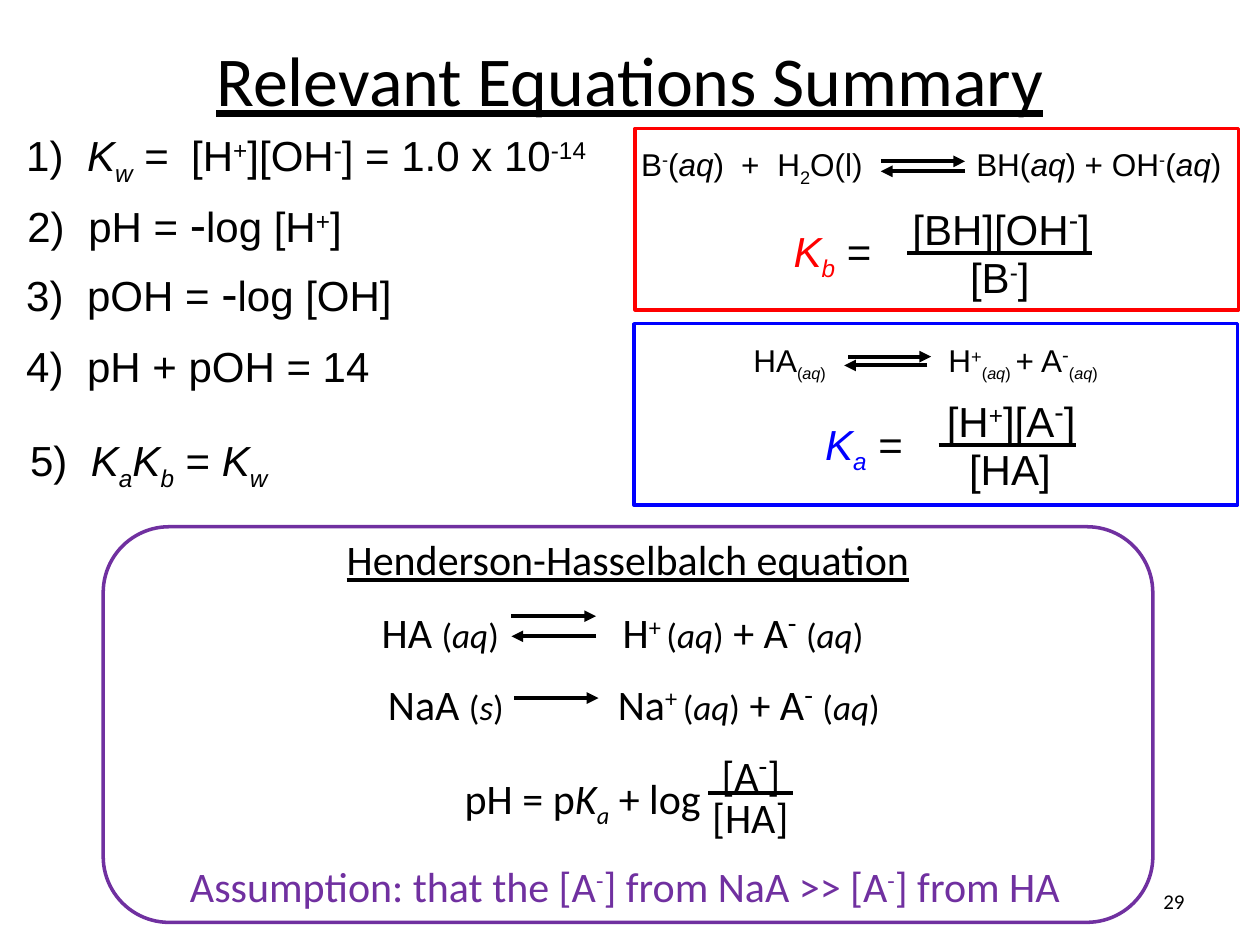
from lxml import etree
from pptx import Presentation
from pptx.dml.color import RGBColor
from pptx.enum import shapes, text
from pptx.oxml.ns import qn
from pptx.util import Pt

BLACK = RGBColor(0, 0, 0)
WHITE = RGBColor(255, 255, 255)
RED = RGBColor(255, 0, 0)
BLUE = RGBColor(0, 0, 255)
PURPLE = RGBColor(0x70, 0x30, 0xA0)
SANS, BODY = "Arial", "Calibri"
LEFT, MID, RIGHT = text.PP_ALIGN.LEFT, text.PP_ALIGN.CENTER, text.PP_ALIGN.RIGHT

# Runs are parted by "|" and may open with marks:
# ^ superscript, _ subscript, / italic, ~ smaller, ! larger, * accent colour
SIZES = {24: {"~": 20, "!": 28}, 18: {"~": 16, "!": 20}}

# Frames: kind, left, top, width, height, colour, fill
FRAMES = [
    ("RECTANGLE", 362.9, 73.4, 344.9, 103.7, RED, None),
    ("RECTANGLE", 362.2, 185, 344.9, 103.7, BLUE, None),
    ("ROUNDED_RECTANGLE", 59, 301, 599.8, 226.1, PURPLE, WHITE),
]

# Numbered equations: left, top, text, tab stops
RULES = [
    (7.9, 70.6, "1)\t|/K|_/w| =\t[H|^+|][OH|^-|] = 1.0 x 10|^-14", (34.8, 94.3)),
    (8.6, 107.3, "2)\tpH = |!-|log [H|^+|]", (34.8,)),
    (7.9, 146.2, "3)\tpOH = |!-|log [OH]", (34.8,)),
    (7.9, 190.8, "4)\tpH + pOH = 14", (34.8,)),
    (10.1, 244.8, "5)\t|/K|_/a|/K|_/b| = |/K|_/w", (34.8,)),
]

# Reactions: left, top, size, font, text, tab stops
REACTS = [
    (359.3, 79.2, 18, SANS,
     "B|^-|(|/aq|)\t+\tH|_2|O(l)\tBH(|/aq|) + OH|^-|(|/aq|)", (57.2, 77.8, 191.5)),
    (423.4, 189.4, 18, SANS,
     "HA|_~(|_~/aq|_~)|\tH|^+|_~(|_~/aq|_~)|_ |+ A|^!-|_~(|_~/aq|_~)", (111.5,)),
    (211, 339.1, 24, BODY,
     "HA |~(|~/aq|~)|\tH|^+ |~(|~/aq|~)| + A|^!-| |~(|~/aq|~)", (137.7,)),
    (214.6, 380.2, 24, BODY,
     "NaA |~(|~/s|~)|\tNa|^+ |~(|~/aq|~)| + A|^!-| |~(|~/aq|~)", (131.4,)),
]

# Arrows: start x, end x, y
ARROWS = [
    (503.3, 551.5, 92.2), (551.5, 503.3, 97.9),
    (484.6, 532.1, 203.8), (529.9, 482.4, 208.8),
    (292.3, 340.6, 352.1), (340.6, 292.3, 363.6),
    (293.8, 342, 398.9),
]

# Fractions: font, accent, lead (left, top, text), top and bottom
# (left, top, width, text), bar (start x, end x, y)
FRACS = [
    (SANS, RED, (446.4, 125.3, "*/K|*_/b| ="),
     (513.4, 108.7, 117.4, "[BH][OH|^!-|]"),
     (546.5, 140.4, 49.7, "[B|^-|]"), (518.4, 624.2, 144.7)),
    (SANS, BLUE, (464.4, 235.4, "*/K|*_/a| ="),
     (532.8, 218.2, 90, "[H|^+|][A|^!-|]"),
     (546.5, 249.8, 61.2, "[HA]"), (536.4, 614.9, 254.2)),
    (BODY, BLACK, (258.5, 437.8, "pH = p|/K|_/a| + log"),
     (403.9, 420.5, 50.4, "[A|^!-|]"),
     (399.6, 448.6, 58.3, "[HA]"), (404.6, 452.9, 452.9)),
]

deck = Presentation()
deck.slide_width, deck.slide_height = Pt(720), Pt(540)
slide = deck.slides.add_slide(deck.slide_layouts[6])


def write(left, top, wide, high, words, size=24, font=SANS, align=LEFT,
          tint=BLACK, accent=BLACK, line=False, tabs=(), mid=False):
    box = slide.shapes.add_textbox(Pt(left), Pt(top), Pt(wide), Pt(high))
    frame = box.text_frame
    frame.word_wrap = align != MID or wide > 200
    if mid:
        frame.vertical_anchor = text.MSO_ANCHOR.MIDDLE
    para = frame.paragraphs[0]
    para.alignment = align
    if tabs:
        stops = etree.SubElement(para._p.get_or_add_pPr(), qn("a:tabLst"))
        for stop in tabs:
            etree.SubElement(stops, qn("a:tab"), pos=str(int(Pt(stop))), algn="l")
    for part in words.split("|"):
        body = part.lstrip("^_/~!*")
        marks = part[:len(part) - len(body)]
        run = para.add_run()
        run.text = body
        face = run.font
        face.name = font
        face.italic = "/" in marks
        face.underline = line
        face.color.rgb = accent if "*" in marks else tint
        face.size = Pt(next((SIZES[size][m] for m in marks if m in "~!"), size))
        if "^" in marks:
            face._element.set("baseline", "30000")
        elif "_" in marks:
            face._element.set("baseline", "-25000")


def stroke(start, end, y, arrow=False):
    link = slide.shapes.add_connector(
        shapes.MSO_CONNECTOR.STRAIGHT, Pt(start), Pt(y), Pt(end), Pt(y))
    link.line.color.rgb = BLACK
    link.line.width = Pt(2.25)
    if arrow:
        etree.SubElement(link.line._get_or_add_ln(), qn("a:tailEnd"), type="triangle")
    etree.SubElement(link._element.spPr, qn("a:effectLst"))


# Frames
for kind, left, top, wide, high, tint, fill in FRAMES:
    shape = slide.shapes.add_shape(
        shapes.MSO_SHAPE[kind], Pt(left), Pt(top), Pt(wide), Pt(high))
    shape.shadow.inherit = False
    shape.line.color.rgb = tint
    shape.line.width = Pt(2)
    if fill is None:
        shape.fill.background()
    else:
        shape.fill.solid()
        shape.fill.fore_color.rgb = fill

# Headings, assumption and page number
write(36, 0, 648, 90, "Relevant Equations Summary", 40, BODY, MID, line=True, mid=True)
write(59, 301.4, 599.8, 36, "Henderson-Hasselbalch equation", 24, BODY, MID, line=True)
write(101.5, 488.2, 514.1, 36, "Assumption: that the [A|^-|] from NaA >> [A|^-|] from HA",
      24, BODY, tint=PURPLE)
write(516.2, 500.4, 167.8, 28.8, "29", 12, BODY, RIGHT, mid=True)

# Numbered equations and reactions
for left, top, words, tabs in RULES:
    write(left, top, 354, 36, words, tabs=tabs)
for left, top, size, font, words, tabs in REACTS:
    write(left, top, 360, 36, words, size, font, tabs=tabs)
for start, end, y in ARROWS:
    stroke(start, end, y, True)

# Fractions
for font, accent, (left, top, lead), upper, lower, bar in FRACS:
    write(left, top, 160, 36, lead, 24, font, accent=accent)
    for x, y, wide, words in (upper, lower):
        write(x, y, wide, 36, words, 24, font, MID)
    stroke(*bar)

deck.save("out.pptx")
